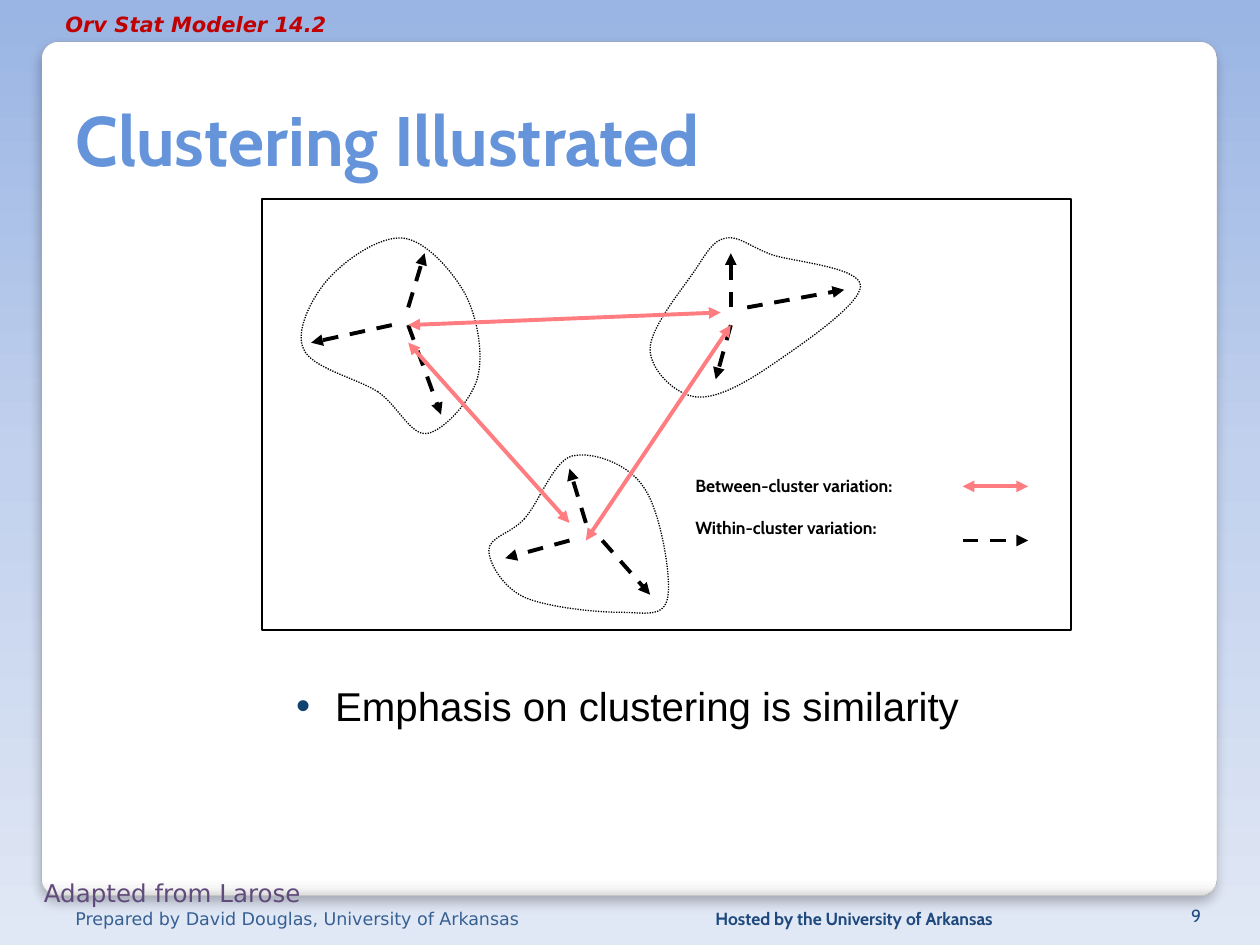
from dataclasses import dataclass

from lxml.etree import SubElement
from pptx import Presentation
from pptx.dml.color import RGBColor
from pptx.enum.dml import MSO_LINE
from pptx.enum.shapes import MSO_CONNECTOR, MSO_SHAPE
from pptx.enum.text import MSO_ANCHOR as Anchor, PP_ALIGN as Align
from pptx.oxml.ns import qn
from pptx.util import Emu, Pt

PX = 9144


@dataclass(frozen=True)
class Theme:
    heading: str = "Cabin"
    body: str = "Arial"
    note: str = "DejaVu Sans"
    black: str = "000000"
    white: str = "FFFFFF"
    title: str = "6594DA"
    bullet: str = "104270"
    between: str = "FF7C80"
    product: str = "C00000"
    footer: str = "1F497D"
    author: str = "376092"
    source: str = "604A7B"
    edge: str = "A4A4A4"
    title_size: int = 40
    body_size: int = 23
    source_size: int = 14
    product_size: int = 12
    small_size: int = 10
    arrow_width: float = 2.25
    outline_width: float = 0.75


THEME = Theme()
SKY = [(0, "9AB5E4"), (50, "C2D1ED"), (100, "E1E8F5")]
PANEL = [(0, "FFFFFF"), (98, "FFFFFF"), (99, "F7F7F7"), (100, "DADADA")]

TITLE = "Clustering Illustrated"
BULLET = "Emphasis on clustering is similarity"
LEGEND = ["Between-cluster variation:", "Within-cluster variation:"]
HEADER = ("Orv Stat Modeler 14.2", (42, 4, 241, 30), THEME.note,
          THEME.product_size, THEME.product, True)
FOOTERS = [
    ("Hosted by the University of Arkansas", (558, 716, 342, 23),
     THEME.heading, THEME.small_size, THEME.footer, True),
    ("Adapted from Larose", (25, 692, 283, 33),
     THEME.note, THEME.source_size, THEME.source, False),
    ("Prepared by David Douglas, University of Arkansas", (50, 716, 446, 23),
     THEME.note, THEME.small_size, THEME.author, False),
]
PAGE_NUMBER = ("9", (913, 717, 50, 23), THEME.heading,
               THEME.small_size, THEME.footer, False)

CLUSTERS = [
    [(300, 311), (283, 300), (247, 292), (241, 277), (234, 263), (247, 237),
     (260, 222), (273, 207), (301, 187), (320, 189), (338, 191), (359, 215),
     (369, 233), (379, 252), (384, 281), (379, 300), (374, 318), (352, 342),
     (339, 344), (326, 346), (316, 322), (300, 311)],
    [(552, 214), (542, 229), (516, 260), (516, 277), (516, 294), (536, 313),
     (552, 315), (568, 317), (590, 305), (612, 290), (634, 275), (683, 242),
     (683, 227), (683, 212), (630, 208), (612, 202), (594, 195), (586, 187),
     (576, 189), (566, 191), (562, 199), (552, 214)],
    [(416, 412), (428, 399), (439, 366), (454, 362), (470, 358), (499, 368),
     (511, 387), (524, 405), (533, 457), (530, 474), (527, 491), (511, 486),
     (492, 486), (473, 486), (434, 482), (416, 474), (399, 466), (388, 447),
     (388, 437), (388, 426), (405, 424), (416, 412)],
]
WITHIN = [
    (324, 244, 337, 201), (324, 258, 350, 329), (311, 258, 247, 272),
    (478, 429, 516, 472), (452, 429, 401, 443), (465, 415, 452, 372),
    (580, 258, 568, 301), (593, 244, 670, 230), (580, 244, 580, 201),
    (764, 429, 816, 429),
]
BETWEEN = [
    (580, 258, 465, 429), (572, 248, 324, 258), (324, 272, 452, 415),
    (764, 386, 816, 386),
]


def scaled(values):
    return [Emu(value * PX) for value in values]


def rgb(code):
    return RGBColor.from_string(code)


def set_gradient(fill, element, stops):
    fill.gradient()
    fill.gradient_angle = 270
    stop_list = element.find(".//" + qn("a:gsLst"))
    for stop in list(stop_list):
        stop_list.remove(stop)
    for position, color in stops:
        stop = SubElement(stop_list, qn("a:gs"), pos=str(position * 1000))
        SubElement(stop, qn("a:srgbClr"), val=color)


def set_line(shape, color, width, dash=None):
    shape.line.color.rgb = rgb(color)
    shape.line.width = Pt(width)
    if dash is not None:
        shape.line.dash_style = dash


def style(para, font, size, color, bold=False):
    para.font.name = font
    para.font.size = Pt(size)
    para.font.color.rgb = rgb(color)
    para.font.bold = bold


def place(shape, bounds):
    shape.left, shape.top, shape.width, shape.height = scaled(bounds)


def add_text(shapes, text, bounds, font, size, color, bold):
    box = shapes.add_textbox(*scaled(bounds))
    box.text_frame.word_wrap = True
    box.text_frame.text = text
    for para in box.text_frame.paragraphs:
        style(para, font, size, color, bold)
    return box


def add_panel(page):
    panel = page.shapes.add_shape(MSO_SHAPE.ROUNDED_RECTANGLE, *scaled((33, 33, 933, 678)))
    panel.adjustments[0] = 0.02
    panel.shadow.inherit = False
    set_gradient(panel.fill, panel._element, PANEL)
    set_line(panel, THEME.edge, 0.16)
    effects = panel._element.spPr.find(qn("a:effectLst"))
    shadow = SubElement(effects, qn("a:outerShdw"), blurRad=str(Pt(6)),
                        dist=str(Pt(4)), dir="5400000", algn="t", rotWithShape="0")
    color = SubElement(shadow, qn("a:srgbClr"), val=THEME.black)
    SubElement(color, qn("a:alpha"), val="25000")
    page.shapes._spTree.insert(2, panel._element)


def add_cluster(shapes, points):
    builder = shapes.build_freeform(*points[0], scale=PX)
    builder.add_line_segments(points[1:], close=True)
    cluster = builder.convert_to_shape()
    outline = cluster._element.find(".//" + qn("a:path"))
    segments = outline.findall(qn("a:lnTo"))
    for start in range(0, len(segments), 3):
        curve = SubElement(outline, qn("a:cubicBezTo"))
        for segment in segments[start:start + 3]:
            curve.append(segment[0])
            outline.remove(segment)
    outline.append(outline.find(qn("a:close")))
    cluster.shadow.inherit = False
    cluster.fill.solid()
    cluster.fill.fore_color.rgb = rgb(THEME.white)
    set_line(cluster, THEME.black, THEME.outline_width, MSO_LINE.ROUND_DOT)


def add_arrow(shapes, ends, color, heads, dash=None):
    arrow = shapes.add_connector(MSO_CONNECTOR.STRAIGHT, *scaled(ends))
    set_line(arrow, color, THEME.arrow_width, dash)
    properties = arrow._element.spPr
    for head in heads:
        SubElement(properties.find(qn("a:ln")), qn(head), type="triangle")
    SubElement(properties, qn("a:effectLst"))


def add_diagram(page):
    shapes = page.shapes.add_group_shape().shapes
    frame = shapes.add_shape(MSO_SHAPE.RECTANGLE, *scaled((208, 158, 642, 342)))
    frame.shadow.inherit = False
    frame.fill.background()
    set_line(frame, THEME.black, THEME.outline_width)
    for points in CLUSTERS:
        add_cluster(shapes, points)
    for ends in WITHIN:
        add_arrow(shapes, ends, THEME.black, ["a:tailEnd"], MSO_LINE.DASH)
    for ends in BETWEEN:
        add_arrow(shapes, ends, THEME.between, ["a:headEnd", "a:tailEnd"])
    legend = add_text(shapes, "\n".join(LEGEND), (542, 372, 244, 100),
                      THEME.heading, THEME.small_size, THEME.black, True)
    legend.text_frame.paragraphs[1].space_before = Pt(12)


def fill_placeholders(page):
    title, body = page.shapes.title, page.placeholders[1]
    place(title, (50, 33, 895, 115))
    title.text_frame.text = TITLE
    title.text_frame.vertical_anchor = Anchor.BOTTOM
    para = title.text_frame.paragraphs[0]
    para.alignment = Align.LEFT
    style(para, THEME.heading, THEME.title_size, THEME.title, True)

    place(body, (175, 133, 808, 567))
    body.text_frame.text = BULLET
    body.text_frame.margin_top = Emu(408 * PX)
    para = body.text_frame.paragraphs[0]
    style(para, THEME.body, THEME.body_size, THEME.black)
    para.space_before = Pt(0)
    properties = para._p.get_or_add_pPr()
    properties.set("marL", str(81 * PX))
    properties.set("indent", str(-31 * PX))
    color = SubElement(properties, qn("a:buClr"))
    SubElement(color, qn("a:srgbClr"), val=THEME.bullet)
    SubElement(properties, qn("a:buChar"), char="•")
    properties.append(properties.find(qn("a:defRPr")))


def main():
    deck = Presentation()
    deck.slide_width, deck.slide_height = scaled((1000, 750))
    page = deck.slides.add_slide(deck.slide_layouts[1])
    set_gradient(page.background.fill, page._element, SKY)
    add_panel(page)
    header = add_text(page.shapes, *HEADER)
    header.text_frame.paragraphs[0].font.italic = True
    add_diagram(page)
    fill_placeholders(page)
    for footer in FOOTERS:
        add_text(page.shapes, *footer)
    number = add_text(page.shapes, *PAGE_NUMBER)
    number.text_frame.vertical_anchor = Anchor.BOTTOM
    number.text_frame.paragraphs[0].alignment = Align.RIGHT
    deck.save("out.pptx")


if __name__ == "__main__":
    main()
